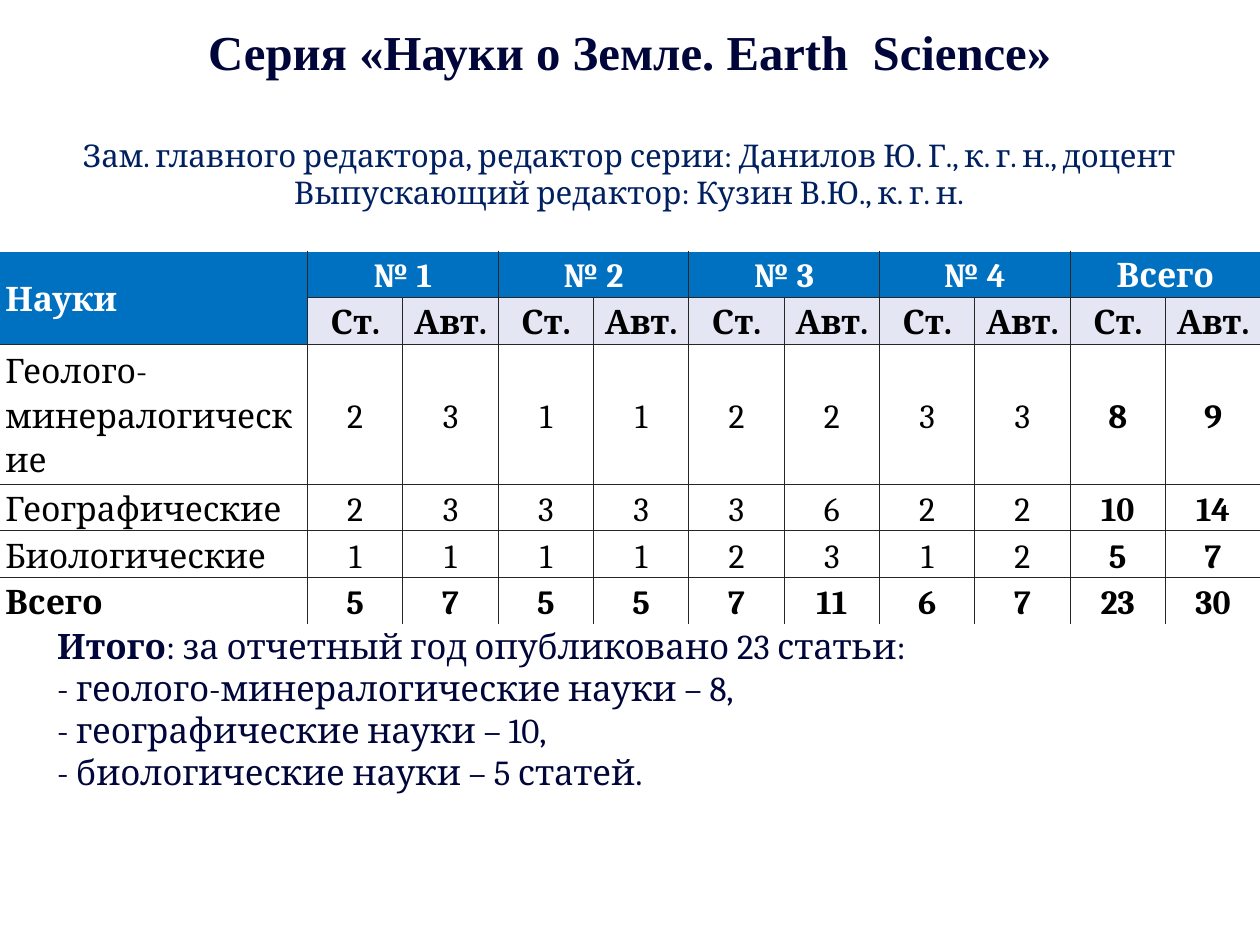
from dataclasses import dataclass

from lxml.etree import SubElement
from pptx import Presentation
from pptx.dml.color import RGBColor
from pptx.enum.text import MSO_ANCHOR, MSO_AUTO_SIZE, PP_ALIGN
from pptx.oxml.ns import qn
from pptx.slide import Slide
from pptx.table import Table, _Cell
from pptx.text.text import _Paragraph
from pptx.util import Cm, Pt

NAVY, BLUE, HEADER_BLUE = "00063A", "002060", "0070C0"
LAVENDER, WHITE, BLACK, GRID = "E5E6F3", "FFFFFF", "000000", "262626"


@dataclass
class Phrase:
    text: str
    bold: bool = False


@dataclass
class TextBlock:
    left: float
    top: float
    width: float
    height: float
    lines: list[list[Phrase]]
    size: float
    color: str
    font: str = "Cambria"
    align: PP_ALIGN = PP_ALIGN.CENTER
    anchor: MSO_ANCHOR = MSO_ANCHOR.TOP
    inset_x: float = 0.36
    inset_y: float = 0.18
    indent: float = 0
    grows: bool = True


@dataclass
class Science:
    name: str
    counts: list[int]


TITLE = TextBlock(
    0, 0, 35.56, 2.9, [[Phrase("Серия «Науки о Земле. Earth  Science»", True)]],
    39, NAVY, font="Times New Roman", anchor=MSO_ANCHOR.MIDDLE, grows=False,
)
SUMMARY = TextBlock(
    0, 17.45, 35.56, 5.16,
    [
        [Phrase("Итого", True), Phrase(": за отчетный год опубликовано 23 статьи:")],
        [Phrase("- геолого-минералогические науки – 8, ")],
        [Phrase("- географические науки – 10, ")],
        [Phrase("- биологические науки – 5 статей.")],
    ],
    28, NAVY, align=PP_ALIGN.JUSTIFY, indent=1.25,
)
EDITORS = TextBlock(
    -0.05, 3.71, 35.61, 2.39,
    [
        [Phrase("Зам. главного редактора, редактор серии: Данилов Ю. Г., к. г. н., доцент")],
        [Phrase("Выпускающий редактор: Кузин В.Ю., к. г. н.")],
    ],
    25, BLUE, inset_x=0.25, inset_y=0.13,
)
ISSUES = ["№ 1", "№ 2", "№ 3", "№ 4", "Всего"]
SCIENCES = [
    Science("Геолого-минералогические", [2, 3, 1, 1, 2, 2, 3, 3]),
    Science("Географические", [2, 3, 3, 3, 3, 6, 2, 2]),
    Science("Биологические", [1, 1, 1, 1, 2, 3, 1, 2]),
]


def rgb(color: str) -> RGBColor:
    return RGBColor.from_string(color)


def add_phrase(paragraph: _Paragraph, phrase: Phrase, font: str, size: float, color: str) -> None:
    run = paragraph.add_run()
    run.text = phrase.text
    run.font.name = font
    run.font.size = Pt(size)
    run.font.bold = phrase.bold
    run.font.color.rgb = rgb(color)


def draw_text(slide: Slide, block: TextBlock) -> None:
    frame = slide.shapes.add_textbox(
        Cm(block.left), Cm(block.top), Cm(block.width), Cm(block.height)
    ).text_frame
    frame.word_wrap = True
    frame.auto_size = MSO_AUTO_SIZE.SHAPE_TO_FIT_TEXT if block.grows else MSO_AUTO_SIZE.NONE
    frame.vertical_anchor = block.anchor
    frame.margin_left = frame.margin_right = Cm(block.inset_x)
    frame.margin_top = frame.margin_bottom = Cm(block.inset_y)
    for index, line in enumerate(block.lines):
        paragraph = frame.add_paragraph() if index else frame.paragraphs[0]
        paragraph.alignment = block.align
        if block.indent:
            properties = paragraph._p.get_or_add_pPr()
            properties.set("marL", "0")
            properties.set("indent", str(Cm(block.indent)))
        for phrase in line:
            add_phrase(paragraph, phrase, block.font, block.size, block.color)


def set_borders(cell: _Cell, colors: dict[str, str]) -> None:
    properties = cell._tc.get_or_add_tcPr()
    for side, color in colors.items():
        border = SubElement(properties, qn(f"a:ln{side}"), w=str(Pt(1)))
        fill = SubElement(border, qn("a:solidFill"))
        SubElement(fill, qn("a:srgbClr"), val=color)


def style_cell(table: Table, row: int, column: int, text: str) -> None:
    cell = table.cell(row, column)
    last_row, last_column = len(table.rows) - 1, len(table.columns) - 1
    right_edge = column + cell.span_width - 1 == last_column
    set_borders(cell, {
        "L": GRID if column else WHITE,
        "R": WHITE if right_edge else GRID,
        "T": GRID if row else WHITE,
        "B": WHITE if row == last_row else GRID,
    })
    is_header = row == 0 or (row == 1 and column == 0)
    fill = HEADER_BLUE if is_header else LAVENDER if row == 1 else WHITE
    cell.fill.solid()
    cell.fill.fore_color.rgb = rgb(fill)
    cell.margin_left = cell.margin_right = Cm(0.18)
    cell.margin_top = cell.margin_bottom = 0
    cell.vertical_anchor = MSO_ANCHOR.MIDDLE if column == 0 or row > 1 else MSO_ANCHOR.TOP
    if cell.is_spanned:
        return
    paragraph = cell.text_frame.paragraphs[0]
    paragraph.alignment = PP_ALIGN.CENTER if column else PP_ALIGN.JUSTIFY
    paragraph.line_spacing = 1.15
    bold = row < 2 or row == last_row or column > last_column - 2
    add_phrase(paragraph, Phrase(text, bold), "Cambria", 27, WHITE if is_header else BLACK)


def publication_rows() -> list[list[str]]:
    counts = [s.counts + [sum(s.counts[::2]), sum(s.counts[1::2])] for s in SCIENCES]
    names = [science.name for science in SCIENCES] + ["Всего"]
    counts.append([sum(column) for column in zip(*counts)])
    issue_cells = [text for issue in ISSUES for text in (issue, "")]
    return [
        ["Науки"] + issue_cells,
        [""] + ["Ст.", "Авт."] * len(ISSUES),
        *([name] + [str(count) for count in row] for name, row in zip(names, counts)),
    ]


def draw_publications(slide: Slide) -> None:
    rows = publication_rows()
    holder = slide.shapes.add_table(
        len(rows), len(rows[0]), Cm(-0.03), Cm(7.09), Cm(35.61), Cm(9.19)
    )
    table = holder.table
    for index, column in enumerate(table.columns):
        column.width = Cm(2.69 if index else 8.71)
    for row in table.rows:
        row.height = Cm(0.28)
    holder.height = Cm(9.19)
    table.cell(0, 0).merge(table.cell(1, 0))
    for column in range(1, len(rows[0]), 2):
        table.cell(0, column).merge(table.cell(0, column + 1))
    for row, texts in enumerate(rows):
        for column, text in enumerate(texts):
            style_cell(table, row, column, text)


def main() -> None:
    presentation = Presentation()
    presentation.slide_width, presentation.slide_height = Cm(35.56), Cm(26.67)
    slide = presentation.slides.add_slide(presentation.slide_layouts[6])
    draw_text(slide, TITLE)
    draw_text(slide, SUMMARY)
    draw_publications(slide)
    draw_text(slide, EDITORS)
    presentation.save("out.pptx")


if __name__ == "__main__":
    main()
